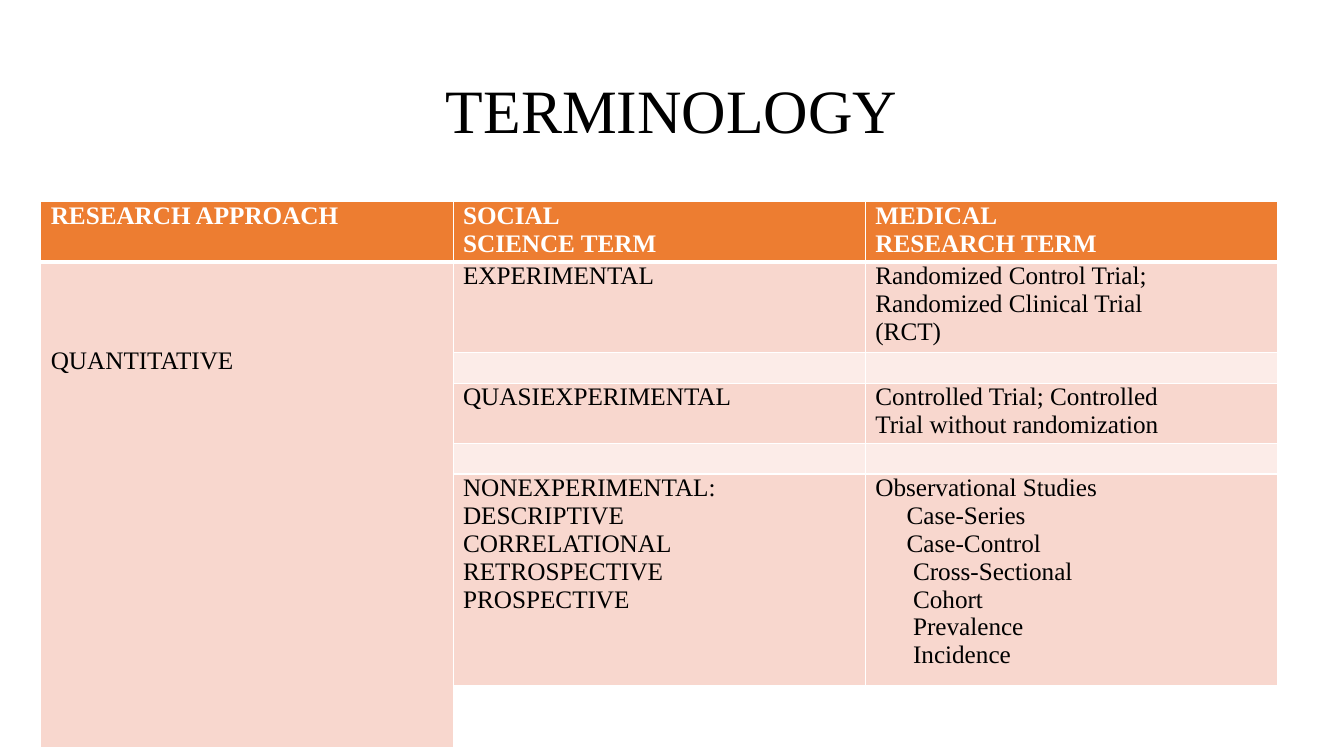
from dataclasses import dataclass

from lxml.etree import SubElement
from pptx import Presentation
from pptx.dml.color import RGBColor
from pptx.enum.text import MSO_ANCHOR, PP_ALIGN
from pptx.oxml.ns import qn
from pptx.util import Cm, Pt

TITLE = "TERMINOLOGY"
HEADERS = [["RESEARCH APPROACH"], ["SOCIAL", "SCIENCE TERM"], ["MEDICAL", "RESEARCH TERM"]]
APPROACH = ["QUANTITATIVE"]
# Social science term, medical research term
TERMS = [
    (["EXPERIMENTAL"],
     ["Randomized Control Trial;", "Randomized Clinical Trial", "(RCT)"]),
    ([], []),
    (["QUASIEXPERIMENTAL"],
     ["Controlled Trial; Controlled", "Trial without randomization"]),
    ([], []),
    (["NONEXPERIMENTAL:", "DESCRIPTIVE", "CORRELATIONAL", "RETROSPECTIVE", "PROSPECTIVE"],
     ["Observational Studies", "Case-Series", "Case-Control", "Cross-Sectional",
      "Cohort", "Prevalence", "Incidence"]),
    ([], []),
    ([], []),
]
INDENTS = {
    **dict.fromkeys(["Case-Series", "Case-Control"], Cm(0.79)),
    **dict.fromkeys(["Cross-Sectional", "Cohort", "Prevalence", "Incidence"], Cm(0.95)),
}
ROW_HEIGHTS = [1.42, 2.13, 0.72, 1.42, 0.72, 5, 0.78, 0.78]
COLUMN_WIDTH = 10.39
CELL_INSET = 0.25
APPROACH_DROP = 2.13


@dataclass(frozen=True)
class Theme:
    font: str = "Times New Roman"
    title_size: int = 44
    body_size: int = 18
    text: str = "000000"
    white: str = "FFFFFF"
    header: str = "ED7D31"
    term_row: str = "F8D7CE"
    gap_row: str = "FCECE8"
    thin_border: int = 1
    thick_border: int = 3


THEME = Theme()


def add_run(paragraph, text, size, color, bold=False):
    run = paragraph.add_run()
    run.text = text
    run.font.name = THEME.font
    run.font.size = Pt(size)
    run.font.bold = bold
    run.font.color.rgb = RGBColor.from_string(color)


def set_borders(cell, top, bottom):
    properties = cell._tc.get_or_add_tcPr()
    widths = {"L": THEME.thin_border, "R": THEME.thin_border, "T": top, "B": bottom}
    for side, width in widths.items():
        line = SubElement(properties, qn(f"a:ln{side}"), w=str(Pt(width)))
        fill = SubElement(line, qn("a:solidFill"))
        SubElement(fill, qn("a:srgbClr"), val=THEME.white)


def fill_cell(cell, lines, fill, color=THEME.text, bold=False):
    cell.margin_left = cell.margin_right = Cm(CELL_INSET)
    cell.margin_top = cell.margin_bottom = 0
    cell.fill.solid()
    cell.fill.fore_color.rgb = RGBColor.from_string(fill)
    frame = cell.text_frame
    for index, line in enumerate(lines):
        paragraph = frame.add_paragraph() if index else frame.paragraphs[0]
        if line in INDENTS:
            paragraph._p.get_or_add_pPr().set("marL", str(INDENTS[line]))
        add_run(paragraph, line, THEME.body_size, color, bold)
    if not lines:
        # An empty cell keeps the height of one body line
        SubElement(frame.paragraphs[0]._p, qn("a:endParaRPr"), sz=str(THEME.body_size * 100))


def add_title(slide):
    box = slide.shapes.add_textbox(Cm(2.33), Cm(1.01), Cm(29.21), Cm(3.68))
    frame = box.text_frame
    frame.word_wrap = True
    frame.vertical_anchor = MSO_ANCHOR.MIDDLE
    paragraph = frame.paragraphs[0]
    paragraph.alignment = PP_ALIGN.CENTER
    paragraph.line_spacing = 0.9
    add_run(paragraph, TITLE, THEME.title_size, THEME.text)


def row_fill(index):
    if index >= len(TERMS) - 2:
        return THEME.white
    return THEME.gap_row if index % 2 else THEME.term_row


def add_terms_table(slide):
    table = slide.shapes.add_table(
        len(ROW_HEIGHTS), len(HEADERS), Cm(1.03), Cm(5.08),
        Cm(COLUMN_WIDTH * len(HEADERS)), Cm(sum(ROW_HEIGHTS))).table
    table.first_row = table.horz_banding = False
    for column in table.columns:
        column.width = Cm(COLUMN_WIDTH)
    for index, (row, height) in enumerate(zip(table.rows, ROW_HEIGHTS)):
        row.height = Cm(height)
        top = THEME.thick_border if index == 1 else THEME.thin_border
        bottom = THEME.thick_border if index == 0 else THEME.thin_border
        for cell in row.cells:
            set_borders(cell, top, bottom)

    for column, lines in enumerate(HEADERS):
        fill_cell(table.cell(0, column), lines, THEME.header, THEME.white, bold=True)
    for index, terms in enumerate(TERMS):
        approach = [] if index else APPROACH
        fill_cell(table.cell(index + 1, 0), approach, THEME.term_row)
        for column, lines in enumerate(terms, start=1):
            fill_cell(table.cell(index + 1, column), lines, row_fill(index))
    approach_cell = table.cell(1, 0)
    approach_cell.merge(table.cell(len(TERMS), 0))
    approach_cell.margin_top = Cm(APPROACH_DROP)


def main():
    presentation = Presentation()
    presentation.slide_width, presentation.slide_height = Cm(33.87), Cm(19.05)
    slide = presentation.slides.add_slide(presentation.slide_layouts[6])
    add_title(slide)
    add_terms_table(slide)
    presentation.save("out.pptx")


if __name__ == "__main__":
    main()
